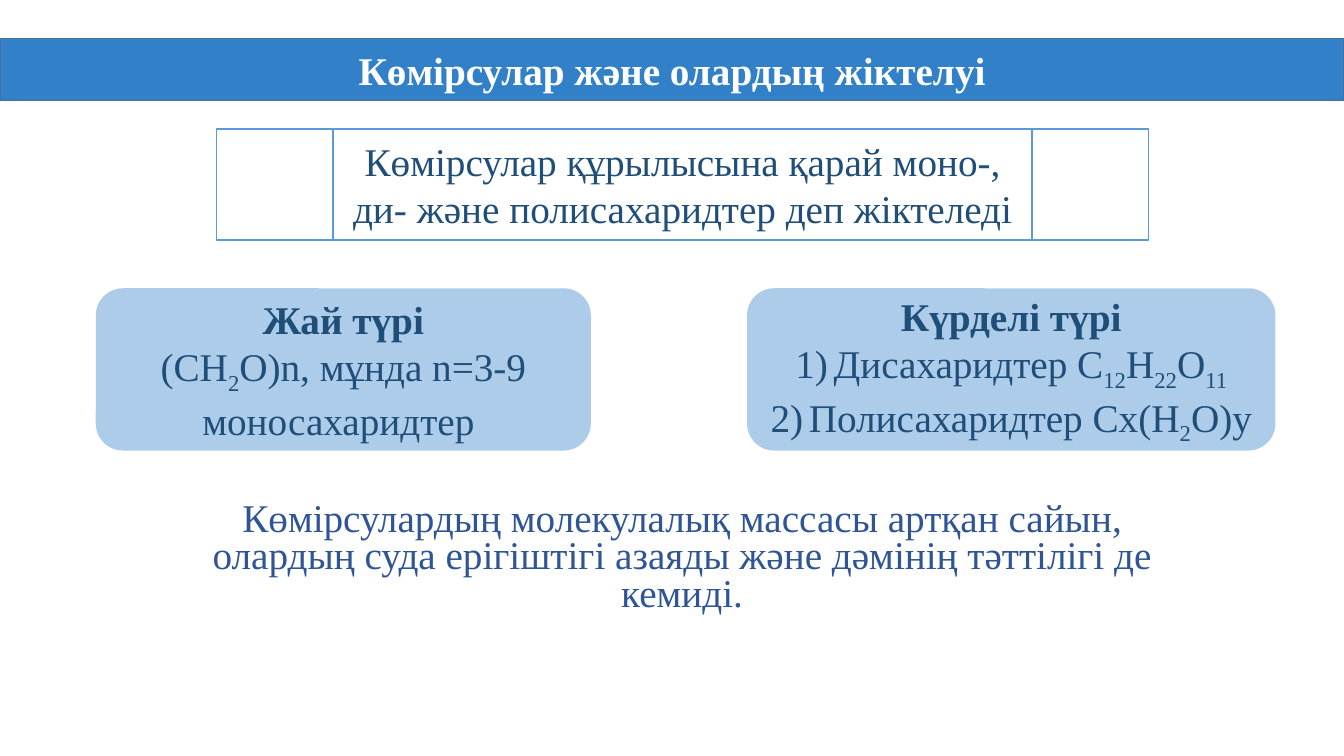
from lxml import etree
from pptx import Presentation
from pptx.dml.color import RGBColor
from pptx.enum.shapes import MSO_SHAPE
from pptx.enum.text import MSO_ANCHOR, MSO_AUTO_SIZE, PP_ALIGN
from pptx.oxml.ns import qn
from pptx.util import Inches, Pt

PROCESS = MSO_SHAPE.FLOWCHART_PREDEFINED_PROCESS
ROUNDED = MSO_SHAPE.ROUNDED_RECTANGLE
MIDDLE, TOP = MSO_ANCHOR.MIDDLE, MSO_ANCHOR.TOP
CENTER = PP_ALIGN.CENTER
NO_AUTOFIT = MSO_AUTO_SIZE.NONE

WHITE = RGBColor(0xFF, 0xFF, 0xFF)
BANNER_BLUE = RGBColor(0x32, 0x81, 0xC8)
BANNER_EDGE = RGBColor(0x43, 0x73, 0x9E)
ACCENT_BLUE = RGBColor(0x5B, 0x9B, 0xD5)
DARK_BLUE = RGBColor(0x1F, 0x4E, 0x79)
BODY_BLUE = RGBColor(0x2F, 0x55, 0x97)

FONT_NAME = "Times New Roman"
FONT_SIZE = Pt(28)
CARD_TOP, CARD_HEIGHT = 2.86, 1.61


def place(shape, left, top, width, height):
    shape.left, shape.top = Inches(left), Inches(top)
    shape.width, shape.height = Inches(width), Inches(height)


def paint(shape, fill, line=None):
    shape.fill.solid()
    shape.fill.fore_color.rgb = fill
    if line is None:
        shape.line.fill.background()
    else:
        shape.line.color.rgb = line
        shape.line.width = Pt(1)


def make_half_transparent(shape):
    color = shape.fill._xPr.find(qn("a:solidFill"))[0]
    etree.SubElement(color, qn("a:alpha"), val="50000")


def set_bullet(paragraph, numbered):
    """Number the paragraph with a hanging indent, or clear its bullet."""
    properties = paragraph._p.get_or_add_pPr()
    indent = Inches(0.38) if numbered else 0
    properties.set("marL", str(indent))
    properties.set("indent", str(-indent))
    if numbered:
        etree.SubElement(properties, qn("a:buAutoNum"), type="arabicParenR")
    else:
        etree.SubElement(properties, qn("a:buNone"))


def add_formula_text(paragraph, text):
    """Add runs; parts between underscores become subscripts."""
    for index, part in enumerate(text.split("_")):
        if not part:
            continue
        run = paragraph.add_run()
        run.text = part
        if index % 2:
            run._r.get_or_add_rPr().set("baseline", "-25000")


def format_paragraph(paragraph, color, bold=False):
    paragraph.alignment = CENTER
    font = paragraph.font
    font.name, font.size, font.bold = FONT_NAME, FONT_SIZE, bold
    font.color.rgb = color


def write_lines(shape, lines, color, anchor=MIDDLE, bold_first=False, numbered=False):
    """Write one paragraph per line; numbering starts after the heading."""
    frame = shape.text_frame
    frame.word_wrap = True
    frame.auto_size = NO_AUTOFIT
    frame.vertical_anchor = anchor
    for index, line in enumerate(lines):
        paragraph = frame.add_paragraph() if index else frame.paragraphs[0]
        set_bullet(paragraph, numbered and index > 0)
        add_formula_text(paragraph, line)
        format_paragraph(paragraph, color, bold_first and index == 0)


def add_box(slide, preset, left, top, width, height, fill, line=None):
    shape = slide.shapes.add_shape(
        preset, Inches(left), Inches(top), Inches(width), Inches(height))
    shape.shadow.inherit = False
    paint(shape, fill, line)
    return shape


def add_card(slide, left, width, lines, numbered=False):
    card = add_box(slide, ROUNDED, left, CARD_TOP, width, CARD_HEIGHT, ACCENT_BLUE)
    make_half_transparent(card)
    write_lines(card, lines, DARK_BLUE, bold_first=True, numbered=numbered)


def main():
    presentation = Presentation()
    presentation.slide_width = Inches(13.33)
    presentation.slide_height = Inches(7.5)
    slide = presentation.slides.add_slide(presentation.slide_layouts[1])

    title = slide.shapes.title
    place(title, 0, 0.38, 13.33, 0.62)
    paint(title, BANNER_BLUE, BANNER_EDGE)
    write_lines(title, ["Көмірсулар және олардың жіктелуі"], WHITE, bold_first=True)

    classification = add_box(slide, PROCESS, 2.15, 1.28, 9.24, 1.1, WHITE, ACCENT_BLUE)
    write_lines(
        classification,
        ["Көмірсулар құрылысына қарай моно-, ди- және полисахаридтер деп жіктеледі"],
        DARK_BLUE)

    add_card(slide, 0.95, 4.91, ["Жай түрі", "(CH_2_O)n, мұнда n=3-9 моносахаридтер "])
    add_card(
        slide, 7.41, 5.24,
        ["Күрделі түрі", "Дисахаридтер C_12_H_22_O_11_", "Полисахаридтер Cх(H_2_O)у"],
        numbered=True)

    body = slide.placeholders[1]
    place(body, 1.89, 4.93, 9.75, 1.3)
    write_lines(
        body,
        ["Көмірсулардың молекулалық массасы артқан сайын, олардың суда "
         "ерігіштігі азаяды және дәмінің тәттілігі де кемиді."],
        BODY_BLUE, anchor=TOP)
    conclusion = body.text_frame.paragraphs[0]
    conclusion.line_spacing = 0.8
    conclusion.space_before = Pt(10)

    presentation.save("out.pptx")


if __name__ == "__main__":
    main()
